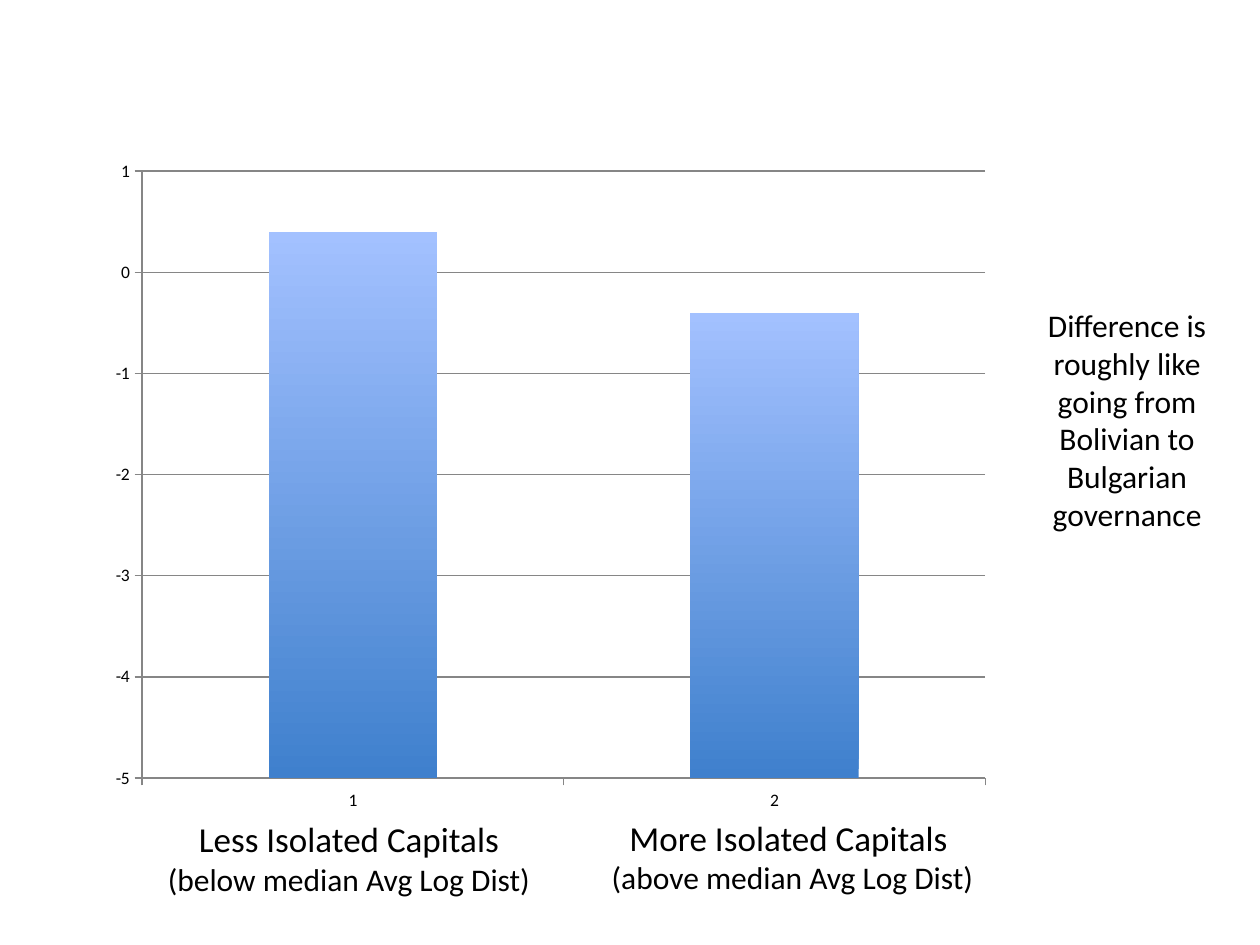
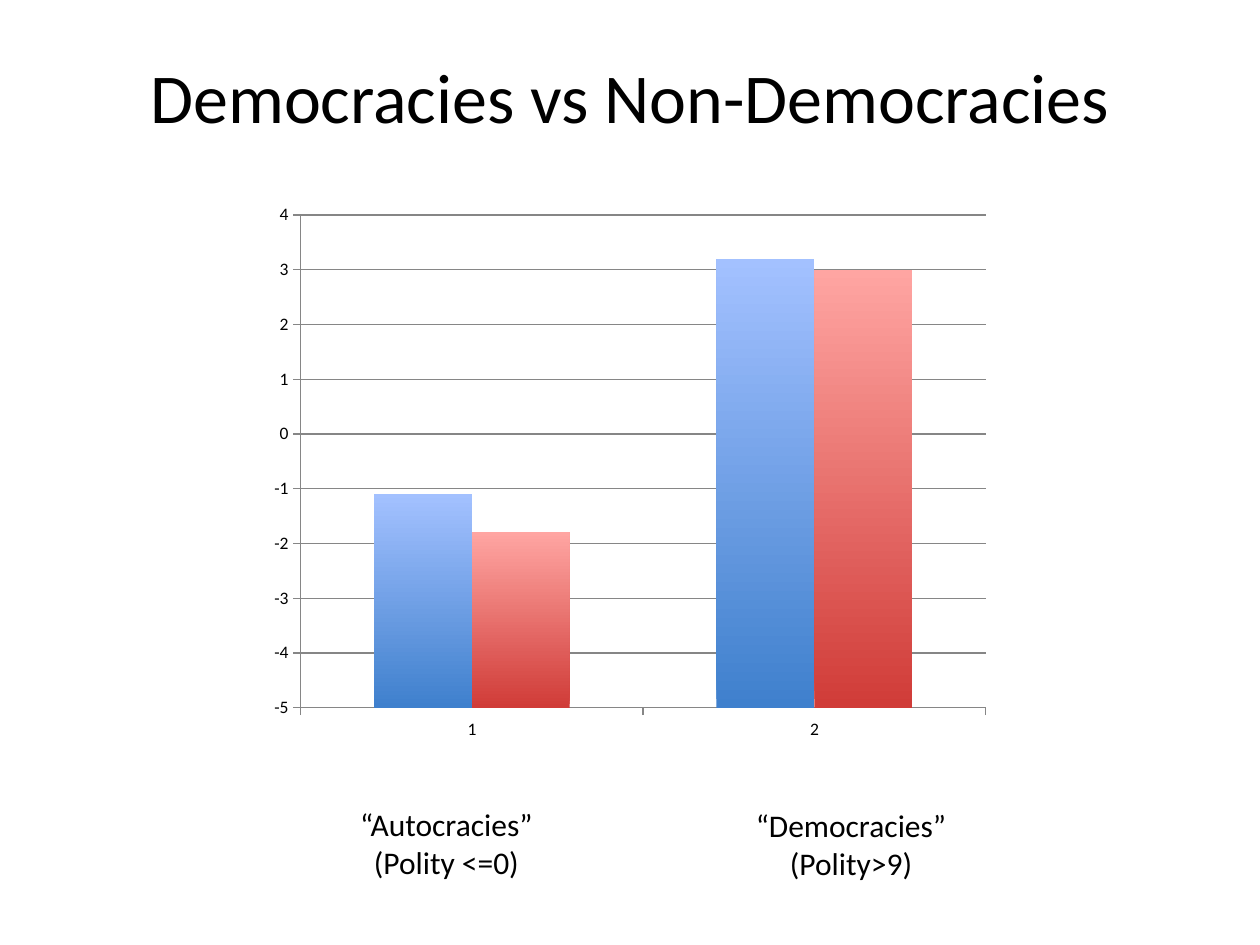
from dataclasses import dataclass

from lxml import etree
from pptx import Presentation
from pptx.chart import data as cd
from pptx.dml import color as dml
from pptx.enum import chart as xl
from pptx.enum import text as te
from pptx.oxml import ns
from pptx.util import Inches, Pt


@dataclass(frozen=True)
class Theme:
    font: str = "Calibri"
    ink: str = "000000"
    grid: str = "868686"
    # (bottom, top) gradient colours, one pair per series
    bars: tuple = (("3F80CD", "A3C1FF"), ("D03C38", "FFA5A2"))
    title_size: int = 40
    label_size: int = 20
    body_size: int = 18
    axis_size: int = 10


THEME = Theme()
CENTER, LEFT = te.PP_ALIGN.CENTER, te.PP_ALIGN.LEFT


def rgb(value):
    return dml.RGBColor.from_string(value)


def style_font(font, size):
    font.name, font.size = THEME.font, Pt(size)
    font.color.rgb = rgb(THEME.ink)


def write(tf, *lines, sizes=(THEME.body_size,), aligns=(CENTER,)):
    """Write one paragraph per line; the last size and alignment carry on."""
    for i, line in enumerate(lines):
        p = tf.paragraphs[0] if i == 0 else tf.add_paragraph()
        p.alignment = aligns[min(i, len(aligns) - 1)]
        r = p.add_run()
        r.text = line
        style_font(r.font, sizes[min(i, len(sizes) - 1)])


def add_label(slide, box, *lines, wrap=True, **fmt):
    tf = slide.shapes.add_textbox(*map(Inches, box)).text_frame
    tf.word_wrap = wrap
    tf.auto_size = te.MSO_AUTO_SIZE.SHAPE_TO_FIT_TEXT
    write(tf, *lines, **fmt)


def set_plot_layout(chart, fractions):
    """Fix the inner plot area as fractions (x, y, w, h) of the chart."""
    plot_area = chart.plots[0]._element.getparent()
    layout = plot_area.find(ns.qn("c:layout"))
    if layout is None:
        layout = etree.Element(ns.qn("c:layout"))
        plot_area.insert(0, layout)
    manual = etree.SubElement(layout, ns.qn("c:manualLayout"))
    settings = [("layoutTarget", "inner"), ("xMode", "edge"), ("yMode", "edge")]
    settings += zip("xywh", fractions)
    for tag, value in settings:
        etree.SubElement(manual, ns.qn(f"c:{tag}")).set("val", str(value))


def add_columns(slide, box, series, top, layout=None):
    data = cd.CategoryChartData()
    data.categories = ["1", "2"]
    for i, values in enumerate(series, 1):
        data.add_series(f"Series {i}", values)
    chart = slide.shapes.add_chart(
        xl.XL_CHART_TYPE.COLUMN_CLUSTERED, *map(Inches, box), data).chart
    chart.has_title = chart.has_legend = False
    style_font(chart.font, THEME.axis_size)

    # Axes: columns rise from the floor of the scale
    cat, val = chart.category_axis, chart.value_axis
    val.minimum_scale, val.maximum_scale, val.major_unit = -5, top, 1
    val.crosses_at = -5
    val.has_major_gridlines = True
    for axis in (cat, val):
        axis.major_tick_mark = xl.XL_TICK_MARK.OUTSIDE
    for part in (cat, val, val.major_gridlines):
        part.format.line.color.rgb = rgb(THEME.grid)
        part.format.line.width = Pt(0.75)

    # Columns
    plot = chart.plots[0]
    plot.gap_width, plot.overlap = 150, 0
    plot.vary_by_categories = False
    for ser, colors in zip(plot.series, THEME.bars):
        ser.invert_if_negative = False
        fill = ser.format.fill
        fill.gradient()
        fill.gradient_angle = 90
        for stop, value in zip(fill.gradient_stops, colors):
            stop.color.rgb = rgb(value)
    if layout:
        set_plot_layout(chart, layout)


def capitals_slide(prs):
    slide = prs.slides.add_slide(prs.slide_layouts[6])
    sizes = (THEME.label_size, THEME.body_size)
    add_label(slide, (1.2, 6.44, 3.14, 0.74), "Less Isolated Capitals",
              "(below median Avg Log Dist)", sizes=sizes, wrap=False)
    add_label(slide, (4.72, 6.43, 3.14, 0.74), "More Isolated Capitals ",
              "(above median Avg Log Dist)", sizes=sizes, wrap=False)
    add_label(slide, (8.04, 2.38, 1.81, 1.92),
              "Difference is roughly like going from Bolivian to "
              "Bulgarian governance")
    add_columns(slide, (0.71, 1.28, 7.33, 5.15), [(0.4, -0.4)], top=1,
                layout=(0.057, 0.015, 0.913, 0.938))


def democracies_slide(prs):
    slide = prs.slides.add_slide(prs.slide_layouts[5])
    title = slide.shapes.title
    title.left, title.top, title.width, title.height = map(
        Inches, (0.5, 0.3, 9, 0.92))
    title.text_frame.vertical_anchor = te.MSO_ANCHOR.MIDDLE
    write(title.text_frame, "Democracies vs Non-Democracies",
          sizes=(THEME.title_size,))
    aligns = (LEFT, CENTER)
    add_label(slide, (2.76, 6.34, 1.64, 0.71), "“Autocracies”",
              "(Polity <=0)", aligns=aligns, wrap=False)
    add_label(slide, (5.9, 6.35, 1.72, 0.71), "“Democracies”",
              "(Polity>9)", aligns=aligns, wrap=False)
    add_columns(slide, (2.06, 1.54, 5.88, 4.42), [(-1.1, 3.2), (-1.8, 3)], top=4)


def main():
    prs = Presentation()
    prs.slide_width, prs.slide_height = Inches(10), Inches(7.5)
    capitals_slide(prs)
    democracies_slide(prs)
    prs.save("out.pptx")


if __name__ == "__main__":
    main()
